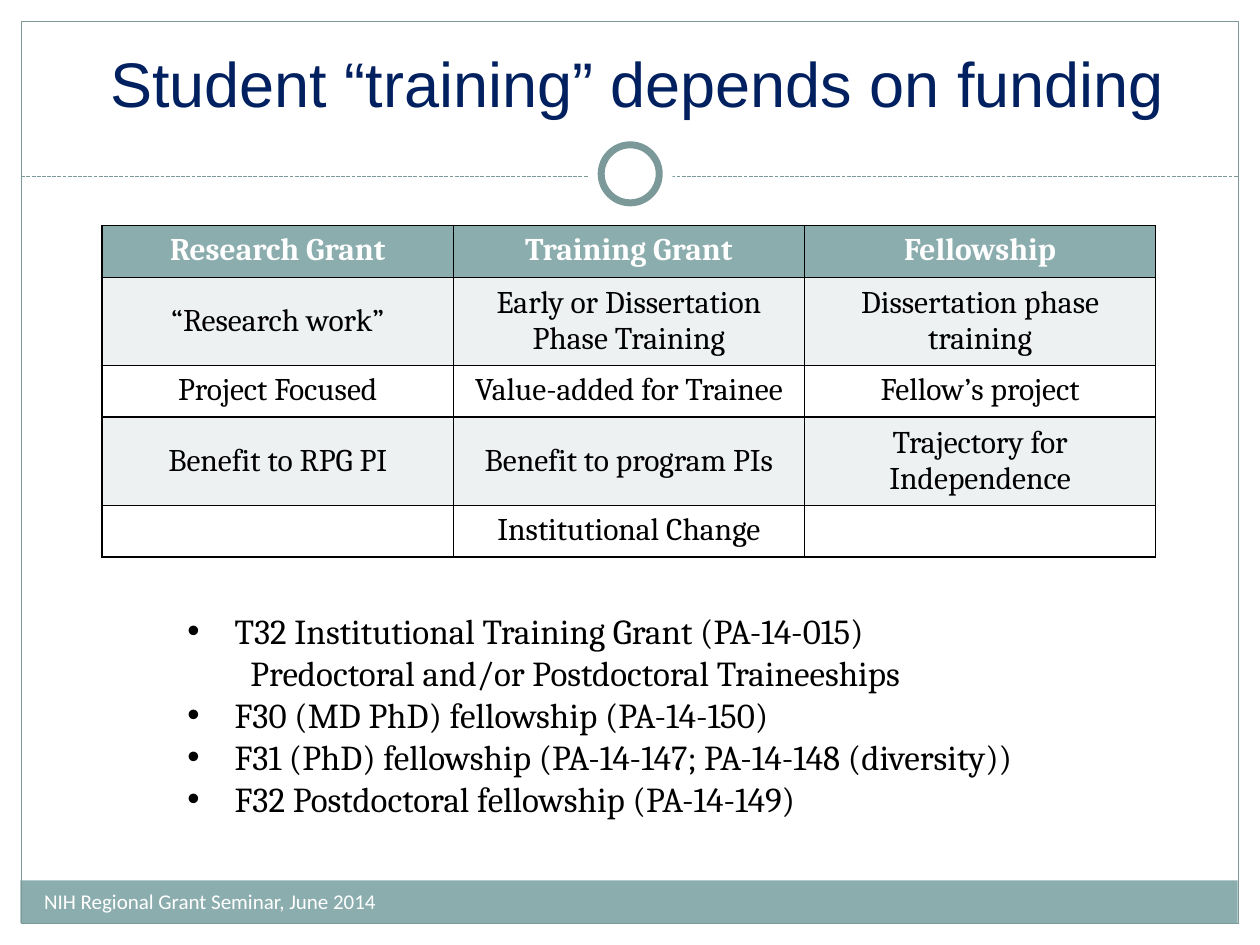
from typing import NamedTuple

from lxml import etree
from pptx import Presentation
from pptx.dml.color import RGBColor
from pptx.enum import dml, shapes, text
from pptx.oxml import ns
from pptx.util import Cm, Pt

WHITE = RGBColor(0xFF, 0xFF, 0xFF)
BLACK = RGBColor(0, 0, 0)
NAVY = RGBColor(0x00, 0x20, 0x60)
TEAL = RGBColor(0x8C, 0xAD, 0xAE)
EDGE = RGBColor(0x7C, 0x99, 0x9A)
PALE = RGBColor(0xEE, 0xF1, 0xF2)
LEFT, MID = text.PP_ALIGN.LEFT, text.PP_ALIGN.CENTER
TOP, CENTER, BOTTOM = (text.MSO_ANCHOR.TOP, text.MSO_ANCHOR.MIDDLE,
                       text.MSO_ANCHOR.BOTTOM)


class Box(NamedTuple):
    """A place on the slide, in centimetres."""
    x: float
    y: float
    w: float
    h: float

    def cm(self) -> list[Cm]:
        return [Cm(v) for v in self]


class Form(NamedTuple):
    kind: shapes.MSO_SHAPE
    box: Box
    fill: RGBColor | None = None
    edge: float = 0


class Style(NamedTuple):
    face: str
    size: float
    color: RGBColor
    bold: bool = False
    align: text.PP_ALIGN = LEFT


class Item(NamedTuple):
    words: str
    bullet: bool = True


RECT, OVAL = shapes.MSO_SHAPE.RECTANGLE, shapes.MSO_SHAPE.OVAL
BAND = Form(RECT, Box(0.41, 17.75, 24.54, 0.86), TEAL)
FRAME = Form(RECT, Box(0.43, 0.43, 24.54, 18.19), None, 0.75)
DISC = Form(OVAL, Box(11.86, 2.67, 1.7, 1.7), WHITE)
RING = Form(OVAL, Box(12.12, 2.92, 1.17, 1.17), WHITE, 4)

HEAD = Style("Cambria", 18, WHITE, True, MID)
CELL = Style("Cambria", 18, BLACK, False, MID)
BODY = Style("Cambria", 20, BLACK)

GRID = [
    ["Research Grant", "Training Grant", "Fellowship"],
    ["“Research work”", "Early or Dissertation Phase Training",
     "Dissertation phase training"],
    ["Project Focused", "Value-added for Trainee", "Fellow’s project"],
    ["Benefit to RPG PI", "Benefit to program PIs",
     "Trajectory for Independence"],
    ["", "Institutional Change", ""],
]
ITEMS = [
    Item("T32 Institutional Training Grant (PA-14-015)"),
    Item("Predoctoral and/or Postdoctoral Traineeships", False),
    Item("F30 (MD PhD) fellowship (PA-14-150)"),
    Item("F31 (PhD) fellowship (PA-14-147; PA-14-148 (diversity))"),
    Item("F32 Postdoctoral fellowship (PA-14-149)"),
]


def draw(slide, form: Form) -> None:
    shape = slide.shapes.add_shape(form.kind, *form.box.cm())
    shape.shadow.inherit = False
    if form.fill is None:
        shape.fill.background()
    else:
        shape.fill.solid()
        shape.fill.fore_color.rgb = form.fill
    if form.edge:
        shape.line.color.rgb = EDGE
        shape.line.width = Pt(form.edge)
    else:
        shape.line.fill.background()


def rule(slide, x: float, end: float, y: float) -> None:
    line = slide.shapes.add_connector(
        shapes.MSO_CONNECTOR.STRAIGHT, Cm(x), Cm(y), Cm(end), Cm(y))
    line.line.color.rgb = EDGE
    line.line.width = Pt(0.75)
    line.line.dash_style = dml.MSO_LINE.SQUARE_DOT
    dash = line.line._ln.find(ns.qn("a:prstDash"))
    dash.set("val", "sysDash")
    etree.SubElement(line._element.spPr, ns.qn("a:effectLst"))


def write(para, words: str, style: Style) -> None:
    para.text = words
    para.alignment = style.align
    font = para.font
    font.name, font.size, font.bold = style.face, Pt(style.size), style.bold
    font.color.rgb = style.color


def frame(slide, box: Box, anchor: text.MSO_ANCHOR):
    body = slide.shapes.add_textbox(*box.cm()).text_frame
    body.word_wrap = True
    body.vertical_anchor = anchor
    return body


def indent(para, left: float, hang: float = 0) -> None:
    props = para._p.get_or_add_pPr()
    props.set("marL", str(Cm(left)))
    props.set("indent", str(Cm(-hang)))
    if hang:
        etree.SubElement(props, ns.qn("a:buFont"), typeface="Arial")
        etree.SubElement(props, ns.qn("a:buChar"), char="•")


def border(cell) -> None:
    props = cell._tc.get_or_add_tcPr()
    for at, side in enumerate(("lnL", "lnR", "lnT", "lnB")):
        line = etree.Element(ns.qn(f"a:{side}"), w=str(Pt(1)))
        fill = etree.SubElement(line, ns.qn("a:solidFill"))
        etree.SubElement(fill, ns.qn("a:srgbClr"), val=str(BLACK))
        props.insert(at, line)


def table(slide, box: Box) -> None:
    grid = slide.shapes.add_table(len(GRID), len(GRID[0]), *box.cm()).table
    for r, row in enumerate(GRID):
        tall = r % 2 == 1
        grid.rows[r].height = Cm(1.78 if tall else 1.04)
        for c, words in enumerate(row):
            cell = grid.cell(r, c)
            cell.fill.solid()
            cell.fill.fore_color.rgb = (
                TEAL if r == 0 else PALE if tall else WHITE)
            cell.vertical_anchor = CENTER if tall else TOP
            write(cell.text_frame.paragraphs[0], words, CELL if r else HEAD)
            border(cell)


def main() -> None:
    deck = Presentation()
    deck.slide_width, deck.slide_height = Cm(25.4), Cm(19.05)
    slide = deck.slides.add_slide(deck.slide_layouts[6])

    # Footer band, page frame, dashed rule and ring
    draw(slide, BAND)
    draw(slide, FRAME)
    rule(slide, 0.43, 24.97, 3.56)
    draw(slide, DISC)
    draw(slide, RING)

    # Title and footer
    title = frame(slide, Box(0.66, 0.76, 24.38, 1.78), BOTTOM)
    write(title.paragraphs[0], "Student “training” depends on funding",
          Style("Arial", 36, NAVY, align=MID))
    foot = frame(slide, Box(0.64, 17.65, 14.35, 1.02), CENTER)
    write(foot.paragraphs[0], "NIH Regional Grant Seminar, June 2014",
          Style("Calibri", 12, WHITE))

    # Grant list
    body = frame(slide, Box(2.26, 12.17, 23.06, 5.56), TOP)
    for n, item in enumerate(ITEMS):
        para = body.add_paragraph() if n else body.paragraphs[0]
        if item.bullet:
            indent(para, 2.22, 0.95)
        else:
            indent(para, 2.54)
        write(para, item.words, BODY)

    # Comparison of funding types
    table(slide, Box(2.06, 4.55, 21.24, 6.68))
    deck.save("out.pptx")


if __name__ == "__main__":
    main()
